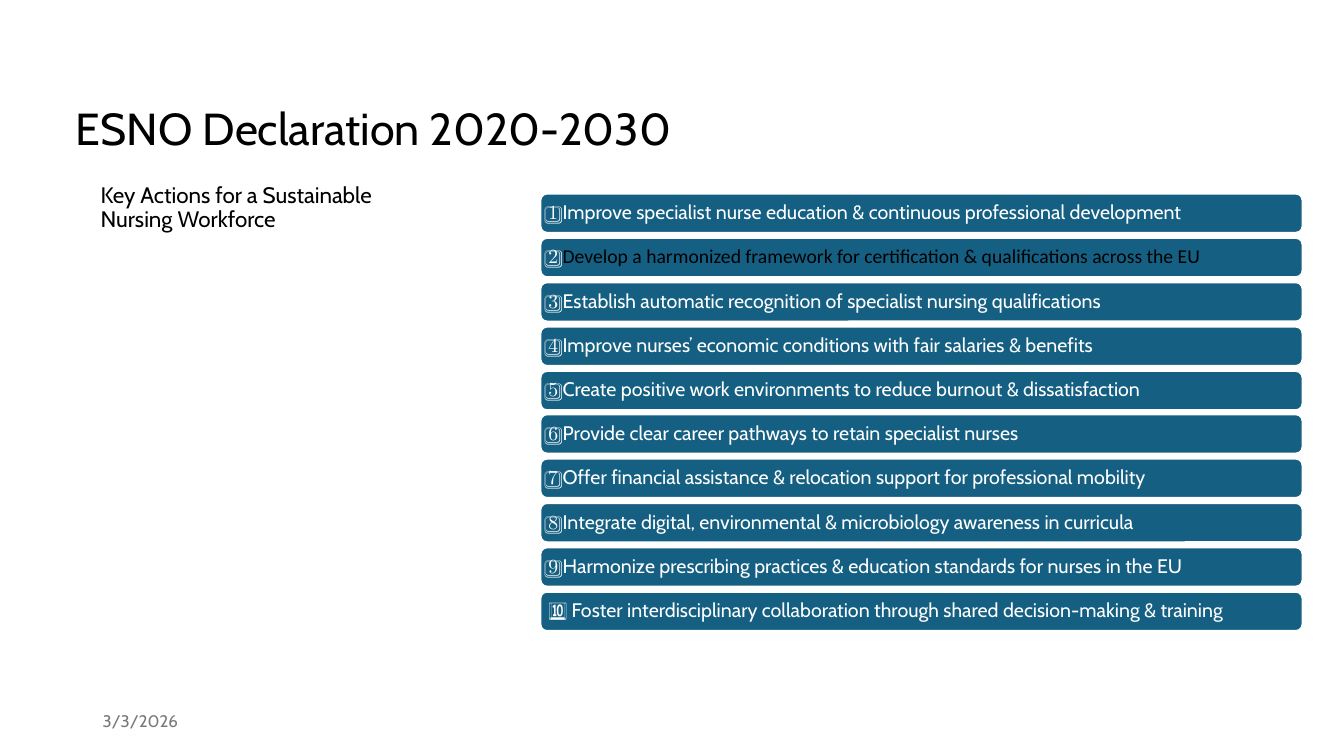
from pptx import Presentation
from pptx.dml.color import RGBColor
from pptx.enum.shapes import MSO_SHAPE
from pptx.enum.text import MSO_ANCHOR, MSO_AUTO_SIZE, PP_ALIGN
from pptx.util import Emu, Pt

ROUNDED = MSO_SHAPE.ROUNDED_RECTANGLE
TOP, MIDDLE, BOTTOM = MSO_ANCHOR.TOP, MSO_ANCHOR.MIDDLE, MSO_ANCHOR.BOTTOM
LEFT = PP_ALIGN.LEFT
NO_FIT = MSO_AUTO_SIZE.NONE
TITLE_ONLY = 5
EMU_PER_PX = 9144

BLACK, WHITE, TEAL, GREY = "000000", "FFFFFF", "156082", "797979"

FIRST_TOP, LAST_TOP = 192, 587
ACTIONS = [
    "Improve specialist nurse education & continuous professional development",
    "Develop a harmonized framework for certification & qualifications across the EU",
    "Establish automatic recognition of specialist nursing qualifications",
    "Improve nurses’ economic conditions with fair salaries & benefits",
    "Create positive work environments to reduce burnout & dissatisfaction",
    "Provide clear career pathways to retain specialist nurses",
    "Offer financial assistance & relocation support for professional mobility",
    "Integrate digital, environmental & microbiology awareness in curricula",
    "Harmonize prescribing practices & education standards for nurses in the EU",
    "Foster interdisciplinary collaboration through shared decision-making & training",
]


def px(length):
    return Emu(length * EMU_PER_PX)


def color(hex_string):
    return RGBColor.from_string(hex_string)


def write(para, text, size=14, font="Cabin", fill=BLACK):
    span = para.add_run()
    span.text = text
    span.font.size = Pt(size)
    span.font.name = font
    span.font.color.rgb = color(fill)


class SlideBuilder:
    def __init__(self, page):
        self.page = page

    def prepare(self, shape, anchor, spacing=0.9):
        frame = shape.text_frame
        frame.word_wrap = True
        frame.auto_size = NO_FIT
        frame.vertical_anchor = anchor
        para = frame.paragraphs[0]
        para.alignment = LEFT
        para.line_spacing = spacing
        return para

    def title(self, text, left, top, width, height):
        title = self.page.shapes.title
        title.left, title.top = px(left), px(top)
        title.width, title.height = px(width), px(height)
        write(self.prepare(title, BOTTOM), text, size=32)

    def text(self, text, left, top, width, height, anchor=TOP, spacing=0.9, **style):
        box = self.page.shapes.add_textbox(px(left), px(top), px(width), px(height))
        write(self.prepare(box, anchor, spacing), text, **style)

    def bar(self, marker, text, left, top, width, height, **style):
        bar = self.page.shapes.add_shape(ROUNDED, px(left), px(top), px(width), px(height))
        bar.shadow.inherit = False
        bar.fill.solid()
        bar.fill.fore_color.rgb = color(TEAL)
        bar.line.color.rgb = color(WHITE)
        bar.line.width = Pt(1.5)
        frame = bar.text_frame
        frame.margin_left = frame.margin_right = px(6)
        frame.margin_top = frame.margin_bottom = px(6)
        para = self.prepare(bar, MIDDLE)
        write(para, marker + " ", fill=WHITE)
        write(para, text, **style)


def main():
    deck = Presentation()
    deck.slide_width, deck.slide_height = px(1333), px(750)
    builder = SlideBuilder(deck.slides.add_slide(deck.slide_layouts[TITLE_ONLY]))

    builder.title("ESNO Declaration 2020-2030", 65, 61, 646, 98)
    pitch = (LAST_TOP - FIRST_TOP) / (len(ACTIONS) - 1)
    for index, action in enumerate(ACTIONS):
        number = index + 1
        marker = "🔟" if number == 10 else f"{number}️⃣"
        style = {"font": "Calibri", "fill": BLACK} if number == 2 else {"fill": WHITE}
        top = round(FIRST_TOP + index * pitch)
        builder.bar(marker, action, 536, top, 756, 39, **style)
    builder.text("Key Actions for a Sustainable Nursing Workforce", 90, 178, 339, 226, size=16)
    builder.text("3/3/2026", 92, 695, 300, 40, anchor=MIDDLE, spacing=1.0, size=12, fill=GREY)

    deck.save("out.pptx")


if __name__ == "__main__":
    main()
